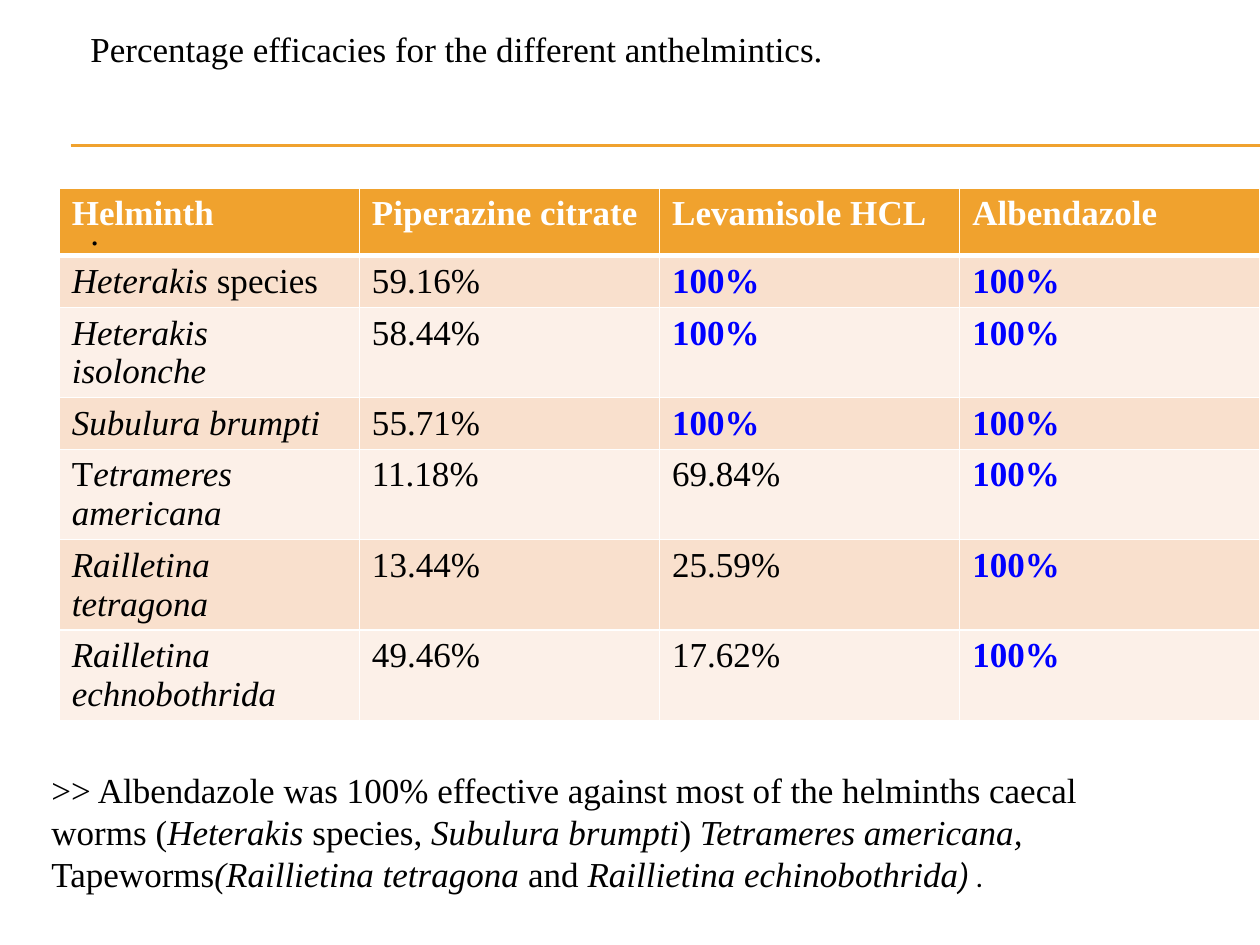
import pptx
import pptx.dml.color
import pptx.enum.shapes
import pptx.enum.text
import pptx.oxml
import pptx.oxml.ns
import pptx.util
from pptx.util import Inches

SERIF = "Times New Roman"
ORANGE, WHITE, BLACK, BLUE = "F0A22E", "FFFFFF", "000000", "0000FF"
BANDS = ("F9E0CD", "FCF0E8")

HEADINGS = ("Helminth", "Piperazine citrate", "Levamisole HCL", "Albendazole")
# Each helminth is a list of (text, italic) parts, followed by its efficacies
EFFICACIES = (
    ([("Heterakis", True), (" species", False)], "59.16%", "100%", "100%"),
    ([("Heterakis isolonche", True)], "58.44%", "100%", "100%"),
    ([("Subulura brumpti", True)], "55.71%", "100%", "100%"),
    ([("T", False), ("etrameres americana", True)], "11.18%", "69.84%", "100%"),
    ([("Railletina tetragona", True)], "13.44%", "25.59%", "100%"),
    ([("Railletina echnobothrida", True)], "49.46%", "17.62%", "100%"),
)
CONCLUSION = (
    (">> Albendazole was 100% effective against most of the helminths caecal worms (", False),
    ("Heterakis ", True),
    ("species, ", False),
    ("Subulura brumpti", True),
    (") ", False),
    ("Tetrameres americana, ", True),
    ("Tapeworms", False),
    ("(Raillietina tetragona", True),
    (" and ", False),
    ("Raillietina echinobothrida", True),
)


def color(hex_code):
    return pptx.dml.color.RGBColor.from_string(hex_code)


def add_text(paragraph, text, size=20, font=SERIF, fill=BLACK, bold=False, italic=False):
    run = paragraph.add_run()
    run.text = text
    run.font.size = pptx.util.Pt(size)
    run.font.name = font
    run.font.color.rgb = color(fill)
    run.font.bold = bold
    run.font.italic = italic


def add_text_box(slide, left, top, width, height):
    frame = slide.shapes.add_textbox(
        Inches(left), Inches(top), Inches(width), Inches(height)).text_frame
    frame.word_wrap = True
    frame.auto_size = pptx.enum.text.MSO_AUTO_SIZE.SHAPE_TO_FIT_TEXT
    return frame


def add_rule(slide, left, right, y):
    rule = slide.shapes.add_connector(
        pptx.enum.shapes.MSO_CONNECTOR.STRAIGHT,
        Inches(left), Inches(y), Inches(right), Inches(y))
    rule.line.color.rgb = color(ORANGE)
    rule.line.width = pptx.util.Pt(0.75)
    rule._element.spPr.append(pptx.oxml.parse_xml(
        f"<a:effectLst {pptx.oxml.ns.nsdecls('a')}/>"))


def style_cell(cell, fill, top=1, bottom=1):
    cell.fill.solid()
    cell.fill.fore_color.rgb = color(fill)
    properties = cell._tc.get_or_add_tcPr()
    widths = {"lnL": 1, "lnR": 1, "lnT": top, "lnB": bottom}
    # Borders come before the fill in the cell properties
    for position, (side, points) in enumerate(widths.items()):
        properties.insert(position, pptx.oxml.parse_xml(
            f'<a:{side} {pptx.oxml.ns.nsdecls("a")} w="{pptx.util.Pt(points)}">'
            f'<a:solidFill><a:srgbClr val="{WHITE}"/></a:solidFill></a:{side}>'))


def add_efficacy_table(slide):
    table = slide.shapes.add_table(
        len(EFFICACIES) + 1, len(HEADINGS),
        Inches(0.47), Inches(1.49), Inches(9.53), Inches(3.01)).table
    for row in table.rows:
        row.height = Inches(0.41)
    table.rows[0].height = Inches(0.54)

    for column, heading in enumerate(HEADINGS):
        cell = table.cell(0, column)
        style_cell(cell, ORANGE, bottom=3)
        add_text(cell.text_frame.paragraphs[0], heading, fill=WHITE, bold=True)

    for row, (helminth, *values) in enumerate(EFFICACIES, start=1):
        for column in range(len(HEADINGS)):
            style_cell(table.cell(row, column), BANDS[(row - 1) % 2],
                       top=3 if row == 1 else 1)
        for text, italic in helminth:
            add_text(table.cell(row, 0).text_frame.paragraphs[0], text, italic=italic)
        for column, value in enumerate(values, start=1):
            full = value == "100%"
            add_text(table.cell(row, column).text_frame.paragraphs[0], value,
                     fill=BLUE if full else BLACK, bold=full)


def add_title(slide):
    frame = add_text_box(slide, 0.62, 0, 8.83, 2.12)
    title = frame.paragraphs[0]
    add_text(title, "Percentage efficacies for the different anthelmintics.")
    stop = frame.add_paragraph()
    add_text(stop, ".")
    stop.space_before = pptx.util.Pt(69)
    for paragraph in (title, stop):
        paragraph.line_spacing = 1.5


def add_conclusion(slide):
    paragraph = add_text_box(slide, 0.31, 6.05, 8.36, 1.11).paragraphs[0]
    for text, italic in CONCLUSION:
        add_text(paragraph, text, italic=italic)
    add_text(paragraph, ") .", size=18, font="Roboto", italic=True)


def main():
    presentation = pptx.Presentation()
    presentation.slide_width = Inches(10)
    presentation.slide_height = Inches(7.5)
    slide = presentation.slides.add_slide(presentation.slide_layouts[6])

    # Double rule under the title
    for y in (1.15, 1.16):
        add_rule(slide, 0.56, 10, y)

    add_efficacy_table(slide)
    add_title(slide)
    add_conclusion(slide)
    presentation.save("out.pptx")


if __name__ == "__main__":
    main()
